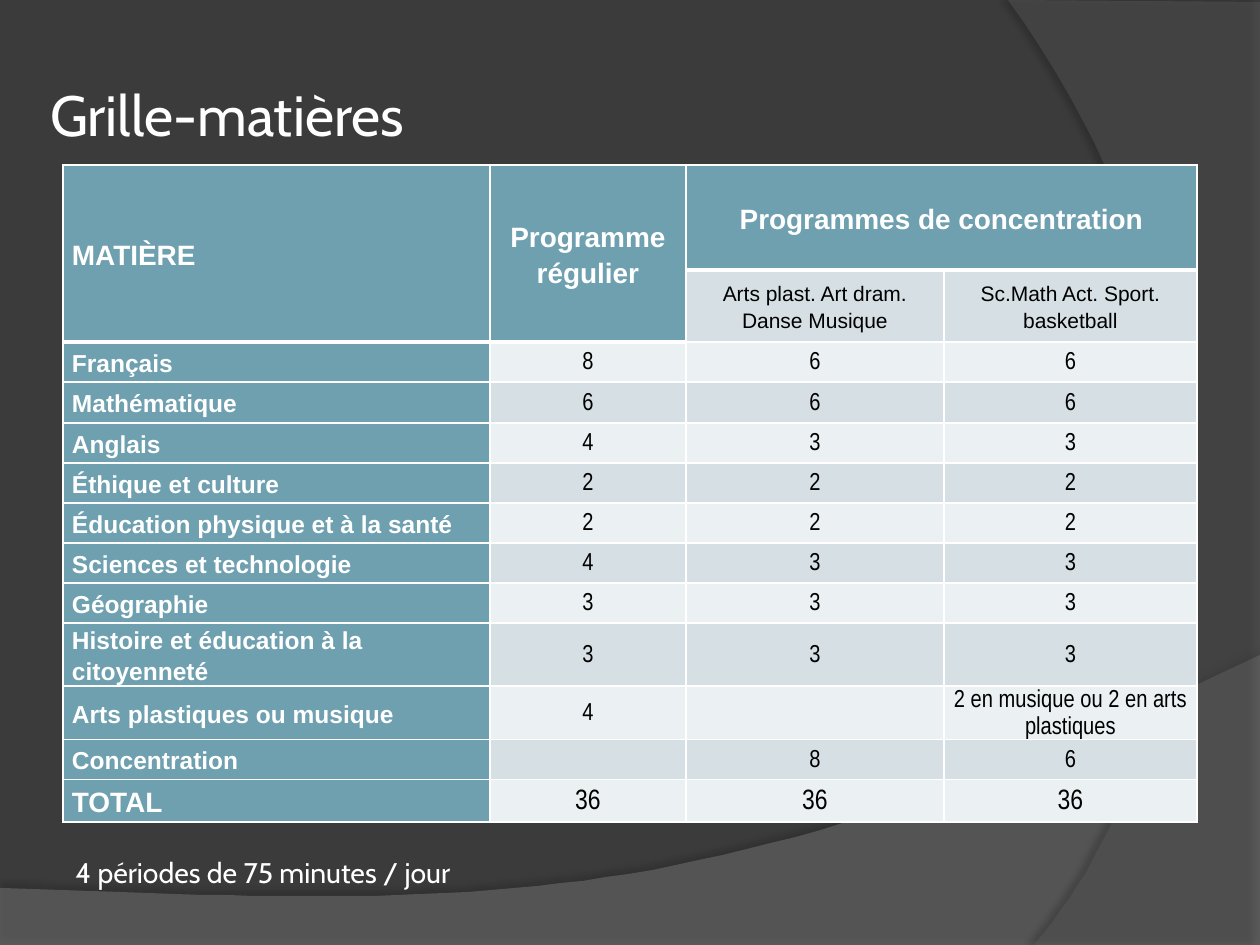
"""Build the subject grid slide: title, timetable table and closing note."""
from dataclasses import dataclass

from lxml.etree import SubElement
from pptx import Presentation
from pptx.dml.color import RGBColor
from pptx.enum.text import MSO_ANCHOR, PP_ALIGN
from pptx.oxml import parse_xml
from pptx.oxml.ns import nsdecls, qn
from pptx.util import Emu, Pt

PX = 914400 / 126
WHITE = RGBColor(0xFF, 0xFF, 0xFF)
BLACK = RGBColor(0x00, 0x00, 0x00)
DARK = RGBColor(0x3B, 0x3B, 0x3B)
GREY = RGBColor(0x7F, 0x7F, 0x7F)
MID_GREY = RGBColor(0x5E, 0x5E, 0x5E)
TEAL = RGBColor(0x6E, 0xA0, 0xB0)
BANDS = (RGBColor(0xEB, 0xF0, 0xF2), RGBColor(0xD5, 0xDF, 0xE4))

COL_WIDTHS = (427, 196, 258, 253)
ROW_HEIGHTS = (105, 72, 40, 41, 40, 40, 40, 40, 40, 63, 53, 40, 43)
HEADER = (
    ("MATIÈRE", "Programme régulier", "Programmes de concentration", ""),
    ("", "", "Arts plast. Art dram.\nDanse Musique", "Sc.Math Act. Sport.\nbasketball"),
)
SUBJECTS = (
    ("Français", "8", "6", "6"),
    ("Mathématique", "6", "6", "6"),
    ("Anglais", "4", "3", "3"),
    ("Éthique et culture", "2", "2", "2"),
    ("Éducation physique et à la santé", "2", "2", "2"),
    ("Sciences et technologie", "4", "3", "3"),
    ("Géographie", "3", "3", "3"),
    ("Histoire et éducation à la citoyenneté", "3", "3", "3"),
    ("Arts plastiques ou musique", "4", "", "2 en musique ou 2 en arts plastiques"),
    ("Concentration", "", "8", "6"),
    ("TOTAL", "36", "36", "36"),
)


@dataclass(frozen=True)
class Wave:
    """A translucent backdrop outline: corners, then curve control points."""
    corners: tuple
    curve: tuple
    color: RGBColor
    alpha: int
    shadow_alpha: int
    shadow_dist: float
    shadow_dir: int


@dataclass(frozen=True)
class CellStyle:
    """The look of one table cell."""
    fill: RGBColor
    color: RGBColor
    size: int
    font: str = "Arial"
    bold: bool = False
    align: PP_ALIGN = PP_ALIGN.CENTER


WAVES = (
    Wave(((0, 888), (0, 946), (1260, 946), (1260, 655)),
         ((1260, 655), (704, 919), (493, 906), (0, 888)), GREY, 45, 35, 3.5, 270),
    Wave(((1008, 0), (1260, 2), (1260, 945), (1034, 945)),
         ((1034, 945), (1178, 780), (1283, 378), (1008, 0)), MID_GREY, 40, 45, 4, 180),
)


def px(n: float) -> Emu:
    """Turn pixels into EMU."""
    return Emu(round(n * PX))


def bezier(curve: tuple, steps: int = 48) -> list:
    """Sample a cubic curve, leaving out its start point."""
    weights = [((1 - t) ** 3, 3 * t * (1 - t) ** 2, 3 * t * t * (1 - t), t ** 3)
               for t in (i / steps for i in range(1, steps + 1))]
    return [tuple(sum(w * pt[axis] for w, pt in zip(ws, curve)) for axis in (0, 1))
            for ws in weights]


def draw_wave(s, wave: Wave) -> None:
    """Draw one backdrop wave with its soft shadow."""
    builder = s.shapes.build_freeform(*wave.corners[0], scale=PX)
    builder.add_line_segments(list(wave.corners[1:]) + bezier(wave.curve))
    sp = builder.convert_to_shape()
    sp.fill.solid()
    sp.fill.fore_color.rgb = wave.color
    sp.line.fill.background()
    clr = sp._element.spPr.find(qn("a:solidFill"))[0]
    SubElement(clr, qn("a:alpha"), val=str(wave.alpha * 1000))
    sp._element.spPr.append(parse_xml(
        f'<a:effectLst {nsdecls("a")}><a:outerShdw blurRad="{Pt(4)}" '
        f'dist="{Pt(wave.shadow_dist)}" dir="{wave.shadow_dir * 60000}" algn="ctr" '
        f'rotWithShape="0"><a:srgbClr val="{BLACK}"><a:alpha '
        f'val="{wave.shadow_alpha * 1000}"/></a:srgbClr></a:outerShdw></a:effectLst>'))


def set_font(p, name: str, size: float, color: RGBColor, bold: bool = False) -> None:
    """Set the font of a paragraph."""
    p.font.name, p.font.size, p.font.bold = name, Pt(size), bold
    p.font.color.rgb = color


def cell_style(row: int, col: int) -> CellStyle:
    """Choose a cell's look from its place in the grid."""
    last = row == len(ROW_HEIGHTS) - 1
    if row == 0 or col == 0 or (row == 1 and col == 1):
        size = 16 if row < 2 or last else 14
        align = PP_ALIGN.LEFT if col == 0 else PP_ALIGN.CENTER
        return CellStyle(TEAL, WHITE, size, bold=True, align=align)
    if row == 1:
        return CellStyle(BANDS[1], BLACK, 12)
    return CellStyle(BANDS[row % 2], BLACK, 16 if last else 14, "Arial Narrow")


def set_borders(cell, row: int, col: int) -> None:
    """Give a cell white borders, thick below the headings."""
    thick = row == 0 or (row == 1 and col < 2)
    widths = {"L": 1, "R": 1, "T": 1, "B": 3 if thick else 1}
    if row > 0:
        del widths["T"]
    tc_pr = cell._tc.get_or_add_tcPr()
    for i, (side, width) in enumerate(widths.items()):
        tc_pr.insert(i, parse_xml(
            f'<a:ln{side} {nsdecls("a")} w="{Pt(width)}"><a:solidFill>'
            f'<a:srgbClr val="{WHITE}"/></a:solidFill></a:ln{side}>'))


def fill_cell(cell, text: str, row: int, col: int) -> None:
    """Write and format one table cell."""
    style = cell_style(row, col)
    cell.text = text
    cell.vertical_anchor = MSO_ANCHOR.MIDDLE
    cell.margin_left = cell.margin_right = px(9)
    cell.margin_top = cell.margin_bottom = 0
    cell.fill.solid()
    cell.fill.fore_color.rgb = style.fill
    for p in cell.text_frame.paragraphs:
        p.alignment, p.line_spacing = style.align, 1.15
        set_font(p, style.font, style.size, style.color, style.bold)
    set_borders(cell, row, col)


def draw_table(s) -> None:
    """Draw the subject table."""
    tbl = s.shapes.add_table(len(ROW_HEIGHTS), len(COL_WIDTHS), px(63), px(165),
                             px(sum(COL_WIDTHS)), px(sum(ROW_HEIGHTS))).table
    for column, width in zip(tbl.columns, COL_WIDTHS):
        column.width = px(width)
    for table_row, height in zip(tbl.rows, ROW_HEIGHTS):
        table_row.height = px(height)
    for row, texts in enumerate(HEADER + SUBJECTS):
        for col, text in enumerate(texts):
            fill_cell(tbl.cell(row, col), text, row, col)
    for first, last in (((0, 0), (1, 0)), ((0, 1), (1, 1)), ((0, 2), (0, 3))):
        tbl.cell(*first).merge(tbl.cell(*last))


def draw_title(s) -> None:
    """Move and format the title placeholder above the backdrop."""
    sp = s.shapes.title
    s.shapes._spTree.append(sp._element)
    sp.left, sp.top, sp.width, sp.height = px(44), px(96), px(1058), px(103)
    tf = sp.text_frame
    tf.text = "Grille-matières\v"
    tf.vertical_anchor = MSO_ANCHOR.MIDDLE
    tf.margin_left = tf.margin_right = tf.margin_top = tf.margin_bottom = px(6)
    tf.paragraphs[0].alignment = PP_ALIGN.LEFT
    set_font(tf.paragraphs[0], "Cabin", 32.4, WHITE)


def draw_note(s) -> None:
    """Add the note under the table."""
    tf = s.shapes.add_textbox(px(63), px(816), px(1058), px(79)).text_frame
    tf.word_wrap = True
    tf.vertical_anchor = MSO_ANCHOR.BOTTOM
    p = tf.paragraphs[0]
    p.text = "4 périodes de 75 minutes / jour"
    set_font(p, "Cabin", 16.2, WHITE)


def main() -> None:
    """Build and save the slide."""
    prs = Presentation()
    prs.slide_width, prs.slide_height = px(1260), px(945)
    s = prs.slides.add_slide(prs.slide_layouts[5])
    s.background.fill.solid()
    s.background.fill.fore_color.rgb = DARK
    for wave in WAVES:
        draw_wave(s, wave)
    draw_title(s)
    draw_table(s)
    draw_note(s)
    prs.save("out.pptx")


if __name__ == "__main__":
    main()
